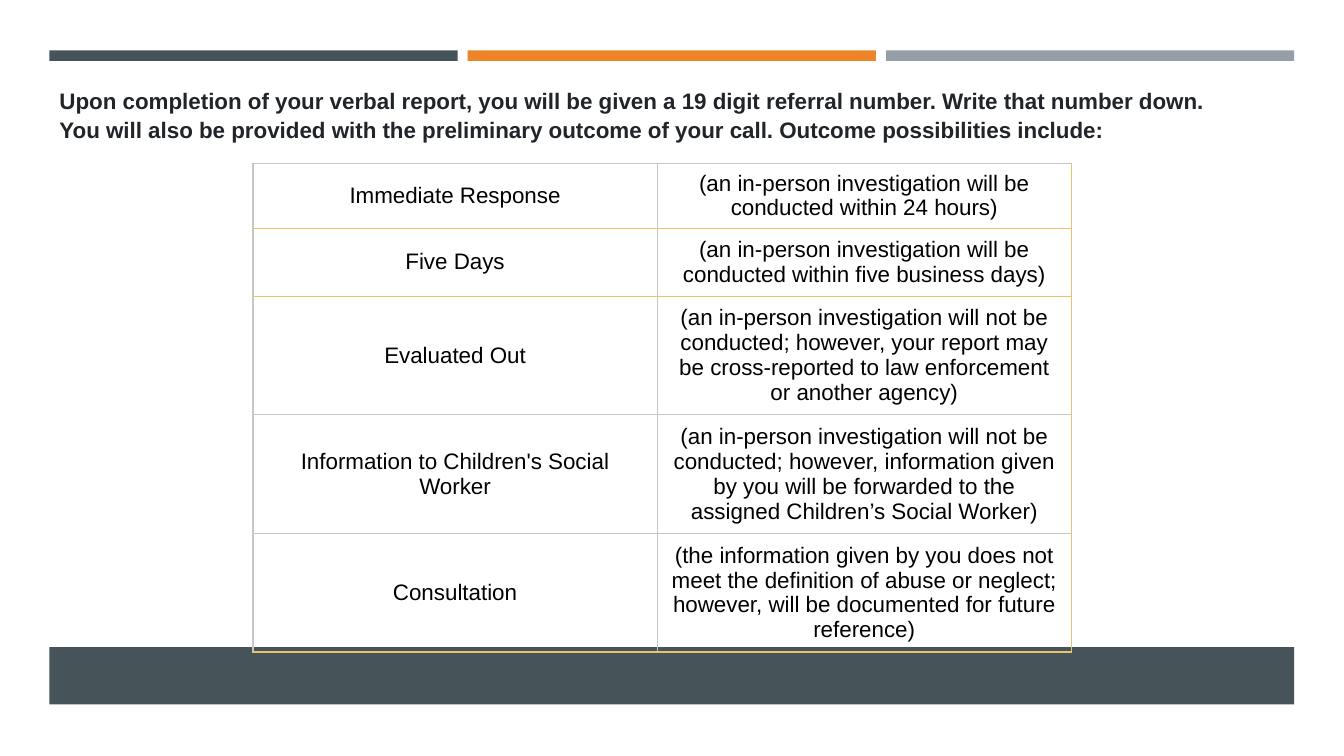
from dataclasses import dataclass

from lxml import etree
from pptx import Presentation
from pptx.dml.color import RGBColor
from pptx.enum import shapes, text
from pptx.oxml import ns
from pptx.util import Pt

WHITE = RGBColor(0xFF, 0xFF, 0xFF)
BLACK = RGBColor(0, 0, 0)
INK = RGBColor(0x21, 0x25, 0x29)
SLATE = RGBColor(0x46, 0x53, 0x59)
ORANGE = RGBColor(0xED, 0x84, 0x28)
STEEL = RGBColor(0x96, 0x9F, 0xA7)
GOLD = RGBColor(0xE6, 0xC4, 0x6D)
GREY = RGBColor(0xC6, 0xC6, 0xC6)

FONT = "Arial"
MARGIN = 35.3
BAR_WIDTH = 291.6
BAR_STEP = 298.8
HEADING = (
    "Upon completion of your verbal report, you will be given a 19 digit referral number. "
    "Write that number down. You will also be provided with the preliminary outcome of "
    "your call. Outcome possibilities include:"
)
COLUMN_WIDTHS = (288.7, 295.9)
COLUMN_EDGES = (GREY, GREY, GOLD)
ROW_EDGES = (GREY, GOLD, GOLD, GREY, GREY, GOLD)


@dataclass(frozen=True)
class Band:
    left: float
    top: float
    width: float
    height: float
    color: RGBColor


@dataclass(frozen=True)
class Outcome:
    name: str
    meaning: str
    height: float


BANDS = [
    Band(MARGIN + index * BAR_STEP, 36, BAR_WIDTH, 7.5, color)
    for index, color in enumerate((SLATE, ORANGE, STEEL))
] + [Band(MARGIN, 462.2, 2 * BAR_STEP + BAR_WIDTH, 41, SLATE)]

OUTCOMES = [
    Outcome("Immediate Response",
            "(an in-person investigation will be conducted within 24 hours)", 46.5),
    Outcome("Five Days",
            "(an in-person investigation will be conducted within five business days)", 48.5),
    Outcome("Evaluated Out",
            "(an in-person investigation will not be conducted; however, your report may "
            "be cross-reported to law enforcement or another agency)", 84.75),
    Outcome("Information to Children's Social Worker",
            "(an in-person investigation will not be conducted; however, information given "
            "by you will be forwarded to the assigned Children’s Social Worker)", 84.75),
    Outcome("Consultation",
            "(the information given by you does not meet the definition of abuse or neglect; "
            "however, will be documented for future reference)", 84.75),
]


def add_span(para, words: str, color: RGBColor, bold: bool = False) -> None:
    span = para.add_run()
    span.text = words
    span.font.name = FONT
    span.font.size = Pt(16)
    span.font.bold = bold
    span.font.color.rgb = color


def add_band(page, band: Band) -> None:
    box = page.shapes.add_shape(
        shapes.MSO_SHAPE.RECTANGLE,
        Pt(band.left), Pt(band.top), Pt(band.width), Pt(band.height))
    box.shadow.inherit = False
    box.fill.solid()
    box.fill.fore_color.rgb = band.color
    box.line.fill.background()


def format_title(page) -> None:
    box = page.shapes.title
    box.left, box.top, box.width, box.height = Pt(MARGIN), Pt(58.3), Pt(838.8), Pt(46)
    box.fill.solid()
    box.fill.fore_color.rgb = WHITE
    frame = box.text_frame
    frame.word_wrap = True
    frame.auto_size = text.MSO_AUTO_SIZE.NONE
    frame.vertical_anchor = text.MSO_ANCHOR.MIDDLE
    para = frame.paragraphs[0]
    para.alignment = text.PP_ALIGN.LEFT
    para.line_spacing = 1.07
    para.space_before = Pt(0)
    para.space_after = Pt(6)
    add_span(para, HEADING, INK, bold=True)


def set_borders(cell, row: int, column: int) -> None:
    properties = cell._tc.get_or_add_tcPr()
    edges = {
        "a:lnL": COLUMN_EDGES[column],
        "a:lnR": COLUMN_EDGES[column + 1],
        "a:lnT": ROW_EDGES[row],
        "a:lnB": ROW_EDGES[row + 1],
    }
    for position, (tag, color) in enumerate(edges.items()):
        line = etree.Element(ns.qn(tag), w=str(Pt(1)))
        fill = etree.SubElement(line, ns.qn("a:solidFill"))
        etree.SubElement(fill, ns.qn("a:srgbClr"), val=str(color))
        properties.insert(position, line)


def add_outcomes(page) -> None:
    table = page.shapes.add_table(
        len(OUTCOMES), len(COLUMN_WIDTHS), Pt(180.7), Pt(116.6),
        Pt(sum(COLUMN_WIDTHS)), Pt(sum(item.height for item in OUTCOMES))).table
    table.first_row = False
    table.horz_banding = False
    for column, width in zip(table.columns, COLUMN_WIDTHS):
        column.width = Pt(width)
    for row, item in enumerate(OUTCOMES):
        table.rows[row].height = Pt(item.height)
        for column, words in enumerate((item.name, item.meaning)):
            cell = table.cell(row, column)
            cell.fill.background()
            cell.vertical_anchor = text.MSO_ANCHOR.MIDDLE
            cell.margin_left = cell.margin_right = Pt(7.9)
            cell.margin_top = cell.margin_bottom = Pt(3.6)
            para = cell.text_frame.paragraphs[0]
            para.alignment = text.PP_ALIGN.CENTER
            add_span(para, words, BLACK)
            set_borders(cell, row, column)


def main() -> None:
    deck = Presentation()
    deck.slide_width, deck.slide_height = Pt(960), Pt(540)
    page = deck.slides.add_slide(deck.slide_layouts.get_by_name("Title Only"))
    page.background.fill.solid()
    page.background.fill.fore_color.rgb = WHITE
    for band in BANDS:
        add_band(page, band)
    format_title(page)
    add_outcomes(page)
    deck.save("out.pptx")


if __name__ == "__main__":
    main()
